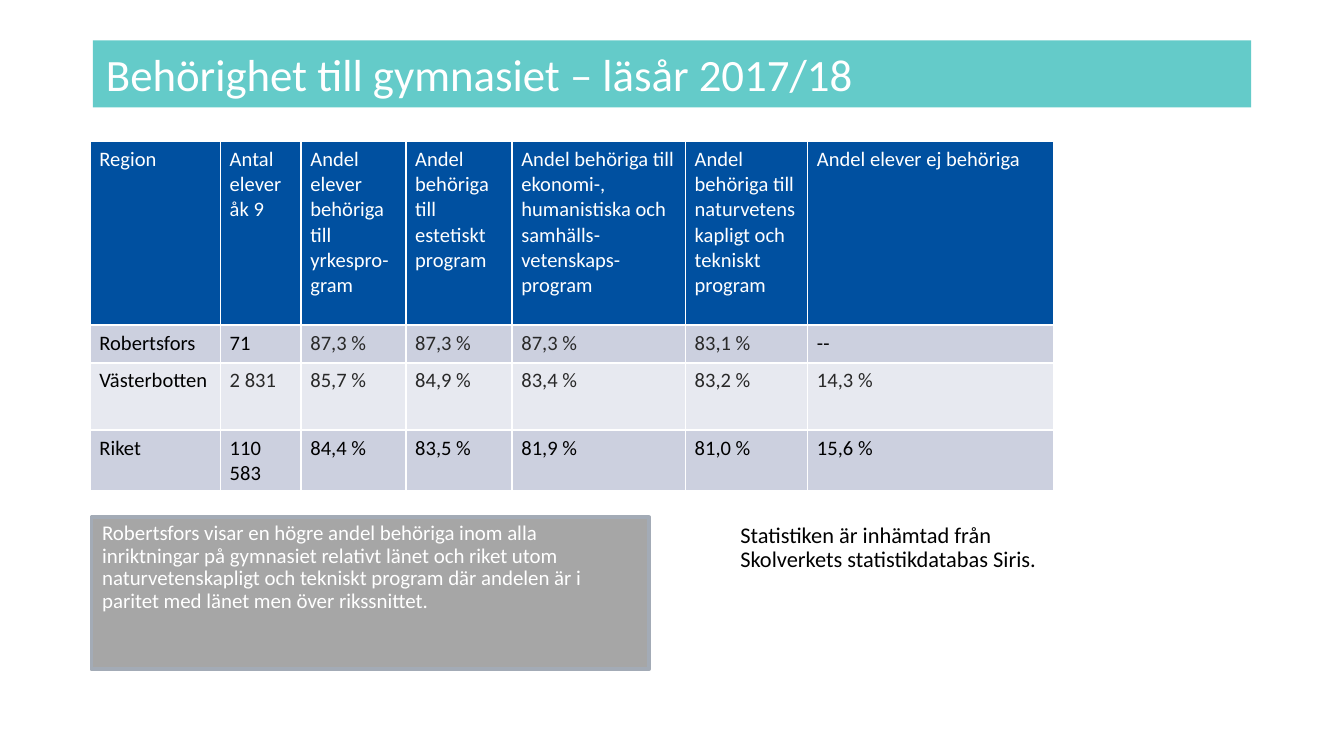
from lxml.etree import SubElement as Sub
from pptx import Presentation
from pptx.dml.color import RGBColor as Rgb
from pptx.enum.shapes import MSO_SHAPE as Shape
from pptx.enum.text import MSO_ANCHOR as Anchor, PP_ALIGN as Align
from pptx.oxml.ns import qn
from pptx.util import Inches, Pt

FONT = "Calibri"
HUES = {
    "white": "FFFFFF", "black": "000000", "dark": "292929",
    "teal": "64CBC9", "blue": "0050A0", "band": "CCD0DF",
    "pale": "E7E9F0", "gray": "A6A6A6", "edge": "A3ABB6",
}
COLS = [0.97, 0.6, 0.78, 0.79, 1.29, 0.91, 1.83]
ROWS = [1.37, 0.28, 0.5, 0.45]
FILLS = ["blue", "band", "pale", "band"]
# Columns with dark gray text, by row
DARK = {1: range(2, 6), 2: range(1, 7)}
DATA = [
    ["Region", "Antal elever åk 9",
     "Andel elever behöriga till yrkespro-gram",
     "Andel behöriga till estetiskt program",
     "Andel behöriga till ekonomi-, humanistiska och "
     "samhälls-vetenskaps-program",
     "Andel behöriga till naturvetenskapligt och tekniskt program",
     "Andel elever ej behöriga"],
    ["Robertsfors", "71", "87,3 %", "87,3 %", "87,3 %", "83,1 %", "--"],
    ["Västerbotten", "2 831", "85,7 %", "84,9 %", "83,4 %", "83,2 %",
     "14,3 %"],
    ["Riket", "110 583", "84,4 %", "83,5 %", "81,9 %", "81,0 %", "15,6 %"],
]


def hue(name):
    return Rgb.from_string(HUES[name])


def paint(thing, name):
    thing.fill.solid()
    thing.fill.fore_color.rgb = hue(name)


def write(frame, text, size, color, space=1.0):
    frame.word_wrap = True
    para = frame.paragraphs[0]
    para.text = text
    para.alignment = Align.LEFT
    para.line_spacing = space
    para.font.name = FONT
    para.font.size = Pt(size)
    para.font.color.rgb = hue(color)


def inset(item, left, right, end):
    item.margin_left, item.margin_right = Inches(left), Inches(right)
    item.margin_top = item.margin_bottom = Inches(end)


def add_panel(slide, box, fill, edge=None):
    panel = slide.shapes.add_shape(Shape.RECTANGLE, *map(Inches, box))
    panel.shadow.inherit = False
    paint(panel, fill)
    if edge:
        panel.line.color.rgb = hue(edge)
        panel.line.width = Pt(2)
    else:
        panel.line.fill.background()
    return panel.text_frame


def add_border(cell, side):
    line = Sub(cell._tc.get_or_add_tcPr(), qn(f"a:ln{side}"), w=str(Pt(1)))
    fill = Sub(line, qn("a:solidFill"))
    Sub(fill, qn("a:srgbClr"), val=HUES["white"])


def fill_cell(cell, text, row, col):
    inset(cell, 0.07, 0.07, 0.04)
    for side in "LRTB":
        add_border(cell, side)
    paint(cell, FILLS[row])
    if row == 0:
        color = "white"
    else:
        color = "dark" if col in DARK.get(row, ()) else "black"
    write(cell.text_frame, text, 11, color)


def add_stats(slide, left, top):
    size = Inches(sum(COLS)), Inches(sum(ROWS))
    table = slide.shapes.add_table(
        len(ROWS), len(COLS), Inches(left), Inches(top), *size).table
    for col, width in zip(table.columns, COLS):
        col.width = Inches(width)
    for row, height in zip(table.rows, ROWS):
        row.height = Inches(height)
    for row, line in enumerate(DATA):
        for col, text in enumerate(line):
            fill_cell(table.cell(row, col), text, row, col)


def main():
    # Widescreen, 16:9
    deck = Presentation()
    deck.slide_width, deck.slide_height = Inches(10), Inches(10 * 9 / 16)
    slide = deck.slides.add_slide(deck.slide_layouts[6])

    # Title bar
    title = add_panel(slide, (0.69, 0.3, 8.62, 0.5), "teal")
    title.vertical_anchor = Anchor.MIDDLE
    write(title, "Behörighet till gymnasiet – läsår 2017/18", 24, "white")

    # Source note
    box = map(Inches, (5.41, 3.85, 2.42, 0.74))
    note = slide.shapes.add_textbox(*box).text_frame
    write(note, "Statistiken är inhämtad från Skolverkets "
          "statistikdatabas Siris.", 12, "black", 0.9)

    # Table of eligibility
    add_stats(slide, 0.67, 1.05)

    # Comment box
    panel = add_panel(slide, (0.68, 3.85, 4.15, 1.13), "gray", "edge")
    panel.vertical_anchor = Anchor.TOP
    inset(panel, 0.08, 0.12, 0.04)
    write(panel, "Robertsfors visar en högre andel behöriga inom alla "
          "inriktningar på gymnasiet relativt länet och riket utom "
          "naturvetenskapligt och tekniskt program där andelen är i "
          "paritet med länet men över rikssnittet.", 11.2, "white", 0.9)

    deck.save("out.pptx")


if __name__ == "__main__":
    main()
